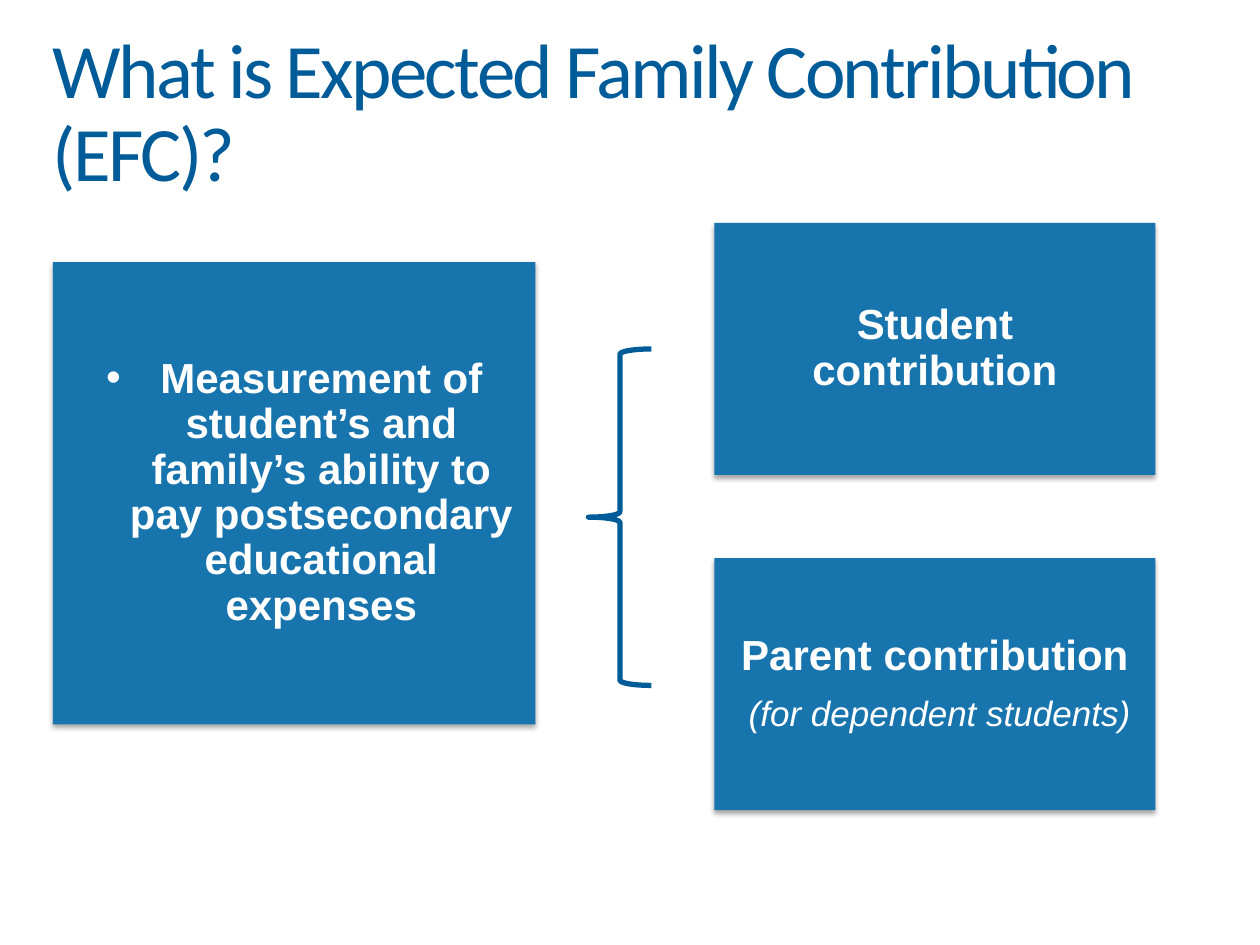
"""Build a slide explaining the Expected Family Contribution."""
import pptx
import pptx.dml.color
import pptx.enum.shapes
import pptx.enum.text
import pptx.oxml
import pptx.oxml.ns
import pptx.util
from pptx.util import Inches

NAVY = pptx.dml.color.RGBColor(0x00, 0x5B, 0x99)
BLUE = pptx.dml.color.RGBColor(0x17, 0x74, 0xAD)
WHITE = pptx.dml.color.RGBColor(0xFF, 0xFF, 0xFF)
SHADOW = (
    f'<a:outerShdw {pptx.oxml.ns.nsdecls("a")} blurRad="{pptx.util.Pt(3.1)}" '
    f'dist="{pptx.util.Pt(1.8)}" dir="5400000" rotWithShape="0">'
    '<a:srgbClr val="000000"><a:alpha val="35000"/></a:srgbClr></a:outerShdw>'
)
BULLET = f'<a:buChar {pptx.oxml.ns.nsdecls("a")} char="•"/>'


def place(sp, left, top, width, height):
    sp.left, sp.top = Inches(left), Inches(top)
    sp.width, sp.height = Inches(width), Inches(height)


def fill_box(sp, lines):
    sp.fill.solid()
    sp.fill.fore_color.rgb = BLUE
    sp.line.fill.background()
    sp.shadow.inherit = False
    effects = sp._element.spPr.find(pptx.oxml.ns.qn("a:effectLst"))
    effects.append(pptx.oxml.parse_xml(SHADOW))
    tf = sp.text_frame
    tf.text = "\n".join(lines)
    tf.word_wrap = True
    tf.auto_size = pptx.enum.text.MSO_AUTO_SIZE.NONE
    tf.vertical_anchor = pptx.enum.text.MSO_ANCHOR.MIDDLE
    tf.margin_left = tf.margin_right = Inches(0.15)
    tf.margin_top = tf.margin_bottom = Inches(0.15)
    for i, p in enumerate(tf.paragraphs):
        p.alignment = pptx.enum.text.PP_ALIGN.CENTER
        p.line_spacing = 0.9
        p.space_before = pptx.util.Pt(0)
        p.space_after = pptx.util.Pt(10)
        font = p.runs[0].font
        font.name = "Arial"
        font.size = pptx.util.Pt(20 if i else 24)
        font.bold = i == 0
        font.italic = i > 0
        font.color.rgb = WHITE


prs = pptx.Presentation()
prs.slide_width, prs.slide_height = Inches(10), Inches(7.5)
s = prs.slides.add_slide(prs.slide_layouts[1])

title = s.shapes.title
place(title, 0.42, 0.25, 9.17, 1.58)
tf = title.text_frame
tf.text = "What is Expected Family Contribution (EFC)?"
tf.word_wrap = True
tf.auto_size = pptx.enum.text.MSO_AUTO_SIZE.NONE
tf.vertical_anchor = pptx.enum.text.MSO_ANCHOR.TOP
tf.margin_left = tf.margin_right = tf.margin_top = tf.margin_bottom = 0
p = tf.paragraphs[0]
p.alignment = pptx.enum.text.PP_ALIGN.LEFT
p.line_spacing = 0.9
r = p.runs[0]
r.font.name = "Calibri"
r.font.size = pptx.util.Pt(44)
r.font.color.rgb = NAVY
r.font._element.set("spc", "-150")

body = s.placeholders[1]
place(body, 0.42, 2.08, 3.83, 3.67)
fill_box(body, ["Measurement of student’s and family’s ability to pay "
                "postsecondary educational expenses"])
pPr = body.text_frame.paragraphs[0]._p.get_or_add_pPr()
pPr.set("marL", str(Inches(0.43)))
pPr.set("indent", str(Inches(-0.43)))
pPr.append(pptx.oxml.parse_xml(BULLET))

brace = s.shapes.add_shape(
    pptx.enum.shapes.MSO_SHAPE.LEFT_BRACE,
    Inches(4.67), Inches(2.77), Inches(0.5), Inches(2.67))
brace.shadow.inherit = False
brace.fill.background()
brace.line.color.rgb = NAVY
brace.line.width = pptx.util.Pt(3)

contributions = [
    ["Student contribution"],
    ["Parent contribution", " (for dependent students)"],
]
for i, lines in enumerate(contributions):
    sp = s.shapes.add_shape(
        pptx.enum.shapes.MSO_SHAPE.RECTANGLE,
        Inches(5.67), Inches(1.77 + 2.66 * i), Inches(3.5), Inches(2))
    fill_box(sp, lines)

prs.save("out.pptx")
